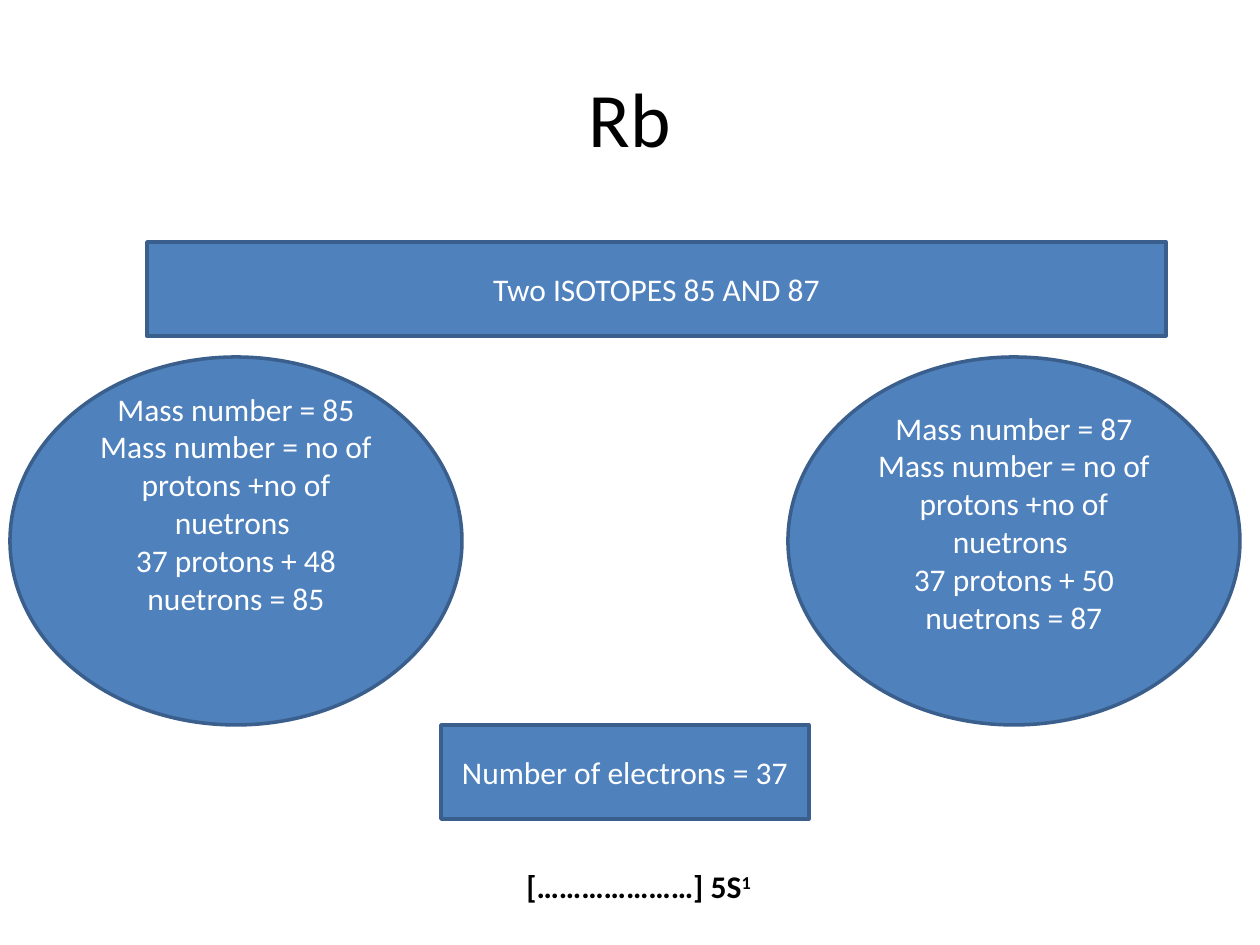
from pptx import Presentation
from pptx.dml.color import RGBColor
from pptx.enum.shapes import MSO_SHAPE
from pptx.enum.text import MSO_ANCHOR, PP_ALIGN
from pptx.util import Pt

PX = 914400 // 126  # EMU in one px
FONT, FILL, EDGE, WHITE, BLACK = "Calibri", "4F81BD", "3A5F8C", "FFFFFF", "000000"
LINE = 38  # height of one 18 pt text line

# Content: text lines, then left, top, width, height in px
title = ("Rb", (63, 38, 1134, 157))
bars = [
    ("Two ISOTOPES 85 AND 87", (147, 242, 1019, 94)),
    ("Number of electrons = 37", (441, 725, 368, 94)),
]
# Isotopes: mass, neutrons, left edge, text lines kept free at the bottom
isotopes = [(85, 48, 10, 2), (87, 50, 788, 1)]
config = ("[…………………] 5S", "1", (514, 861, 252, 50))


def color(code):
    return RGBColor.from_string(code)


def write(shape, lines, size, code, align=PP_ALIGN.CENTER):
    frame = shape.text_frame
    frame.word_wrap = True
    frame.vertical_anchor = MSO_ANCHOR.MIDDLE
    frame.text = "\n".join(lines)
    for para in frame.paragraphs:
        para.alignment = align
        for run in para.runs:
            run.font.name = FONT
            run.font.size = Pt(size)
            run.font.color.rgb = color(code)
    return frame


def add_box(slide, box):
    return slide.shapes.add_textbox(*(v * PX for v in box))


def add_block(slide, kind, box, lines):
    shape = slide.shapes.add_shape(kind, *(v * PX for v in box))
    shape.shadow.inherit = False
    shape.fill.solid()
    shape.fill.fore_color.rgb = color(FILL)
    shape.line.color.rgb = color(EDGE)
    shape.line.width = Pt(2)
    return write(shape, lines, 18, WHITE)


def main():
    prs = Presentation()
    prs.slide_width, prs.slide_height = 1260 * PX, 945 * PX
    slide = prs.slides.add_slide(prs.slide_layouts[6])

    # Title
    text, box = title
    write(add_box(slide, box), [text], 44, BLACK)

    # Bars
    for text, box in bars:
        add_block(slide, MSO_SHAPE.RECTANGLE, box, [text])

    # Isotope ellipses
    for mass, count, left, free in isotopes:
        lines = [
            f"Mass number = {mass}",
            "Mass number = no of protons +no of nuetrons ",
            f"37 protons + {count} nuetrons = {mass}",
        ]
        frame = add_block(slide, MSO_SHAPE.OVAL, (left, 357, 452, 368), lines)
        frame.margin_bottom += free * LINE * PX

    # Electron configuration with its superscript
    text, power, box = config
    frame = write(add_box(slide, box), [text], 18, BLACK, PP_ALIGN.LEFT)
    frame.word_wrap = False
    para = frame.paragraphs[0]
    top = para.add_run()
    top.text = power
    top.font.name, top.font.size = FONT, Pt(18)
    top.font.color.rgb = color(BLACK)
    top.font._element.set("baseline", "30000")
    for run in para.runs:
        run.font.bold = True

    prs.save("out.pptx")


if __name__ == "__main__":
    main()
